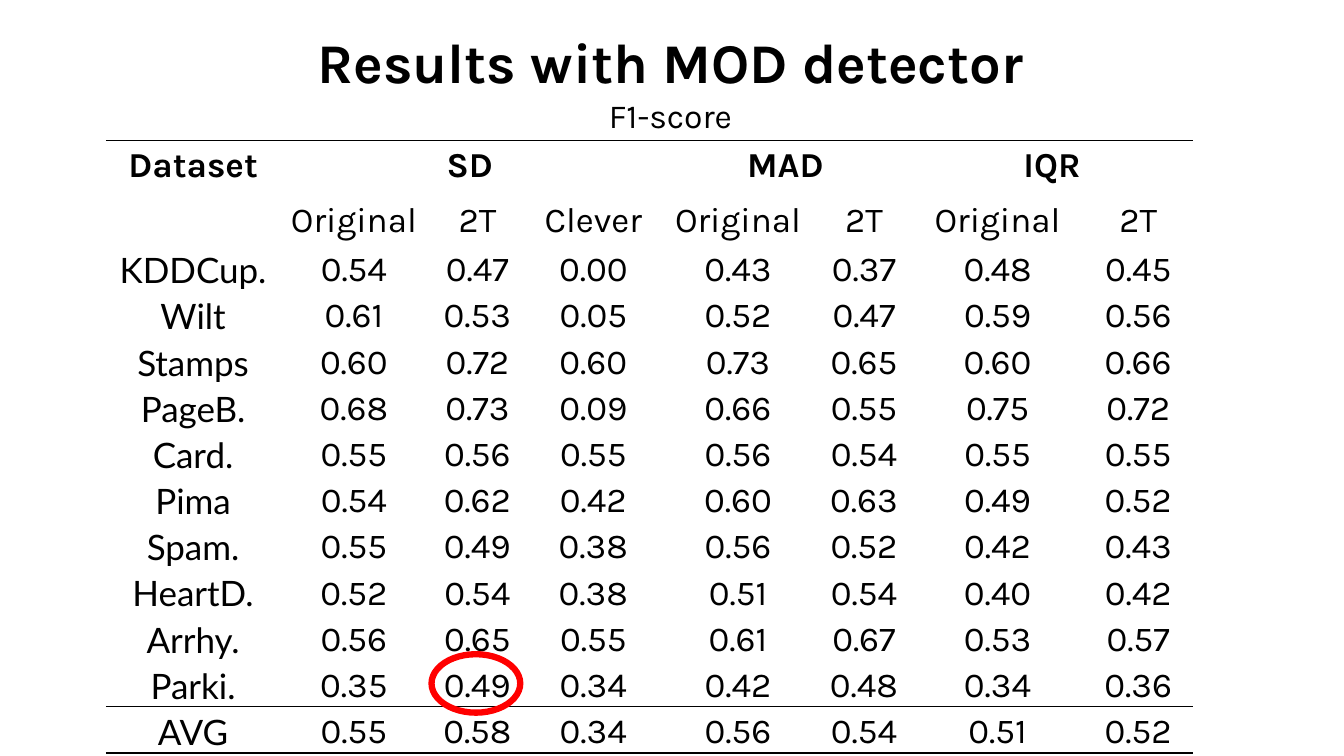
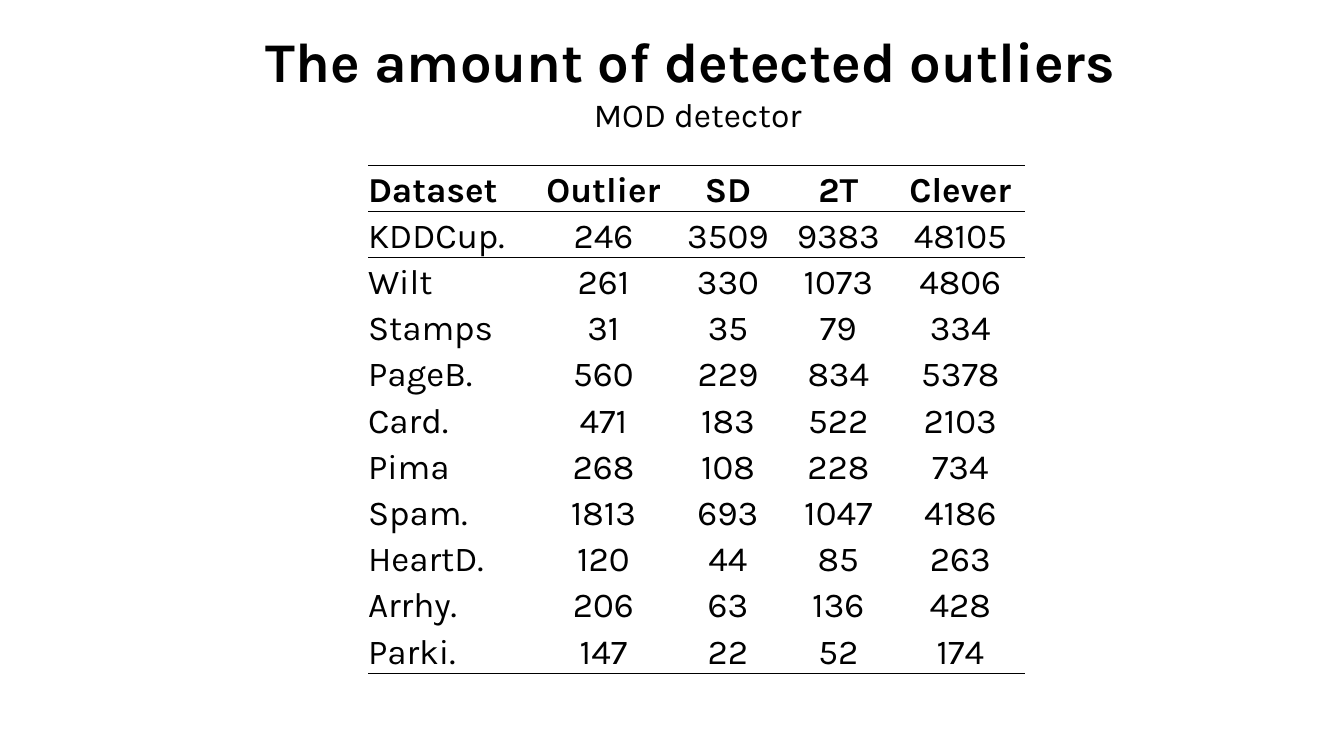
from dataclasses import dataclass
from itertools import product

from lxml.etree import SubElement
from pptx import Presentation
from pptx.dml.color import RGBColor
from pptx.enum.shapes import MSO_SHAPE
from pptx.enum.text import MSO_ANCHOR, MSO_AUTO_SIZE, PP_ALIGN
from pptx.oxml.ns import qn
from pptx.util import Inches, Pt


@dataclass(frozen=True)
class Theme:
    """Colours, fonts and sizes shared by the slides."""
    ink: str = "000000"
    mark: str = "FF0000"
    font: str = "Karla"
    name_font: str = "Lato"
    title: int = 40
    subtitle: int = 24
    body: int = 25
    rule: float = 1
    ring: float = 4.5
    row: float = 0.41
    head_row: float = 0.52
    spacing: float = 1.1
    plain_table: str = "{2D5ABB26-0587-4C30-8999-92F81FD0307C}"


theme = Theme()
NAMES = "KDDCup. Wilt Stamps PageB. Card. Pima Spam. HeartD. Arrhy. Parki.".split()
SCORES = """0.54 0.47 0.00 0.43 0.37 0.48 0.45
0.61 0.53 0.05 0.52 0.47 0.59 0.56
0.60 0.72 0.60 0.73 0.65 0.60 0.66
0.68 0.73 0.09 0.66 0.55 0.75 0.72
0.55 0.56 0.55 0.56 0.54 0.55 0.55
0.54 0.62 0.42 0.60 0.63 0.49 0.52
0.55 0.49 0.38 0.56 0.52 0.42 0.43
0.52 0.54 0.38 0.51 0.54 0.40 0.42
0.56 0.65 0.55 0.61 0.67 0.53 0.57
0.35 0.49 0.34 0.42 0.48 0.34 0.36
0.55 0.58 0.34 0.56 0.54 0.51 0.52"""
COUNTS = """246 3509 9383 48105
261 330 1073 4806
31 35 79 334
560 229 834 5378
471 183 522 2103
268 108 228 734
1813 693 1047 4186
120 44 85 263
206 63 136 428
147 22 52 174"""


def add_rows(names, block):
    """Join each row name with the values on its line."""
    return [[name, *line.split()] for name, line in zip(names, block.splitlines())]


def write(p, text, size, bold=False, font=theme.font, align=PP_ALIGN.CENTER):
    """Put one formatted run into a paragraph."""
    p.alignment = align
    r = p.add_run()
    r.text = text
    for key, value in dict(size=Pt(size), bold=bold, name=font).items():
        setattr(r.font, key, value)
    r.font.color.rgb = RGBColor.from_string(theme.ink)


slides = [
    dict(
        title="Results with MOD detector", subtitle="F1-score",
        title_box=(2.1, 0.22, 9.1, 1.17), corner=(1.05, 1.39),
        cols=(1.73, 1.46, 0.99, 1.31, 1.56, 0.94, 1.71, 1.08),
        rows=[["Dataset", "SD", "", "", "MAD", "", "IQR", ""],
              ["", "Original", "2T", "Clever", "Original", "2T", "Original", "2T"],
              *add_rows([*NAMES, "AVG"], SCORES)],
        merges=[(0, 0, 1, 0), (0, 1, 0, 3), (0, 4, 0, 5), (0, 6, 0, 7)],
        rules={0, 12, 13}, head_rows=2,
        name_font=theme.name_font, name_align=PP_ALIGN.CENTER,
        ring=(4.28, 6.49, 0.88, 0.58),
    ),
    dict(
        title="The amount of detected outliers ", subtitle="MOD detector",
        title_box=(2.1, 0.21, 9.64, 1.18), corner=(3.65, 1.64),
        cols=(1.63, 1.41, 1.06, 1.13, 1.29),
        rows=[["Dataset", "Outlier", "SD", "2T", "Clever"], *add_rows(NAMES, COUNTS)],
        merges=[], rules={0, 1, 11}, head_rows=0,
        name_font=theme.font, name_align=PP_ALIGN.LEFT,
        ring=None,
    ),
]

prs = Presentation()
prs.slide_width, prs.slide_height = Inches(13.33), Inches(7.5)

for page in slides:
    slide = prs.slides.add_slide(prs.slide_layouts[6])

    tf = slide.shapes.add_textbox(*map(Inches, page["title_box"])).text_frame
    frame_format = dict(word_wrap=True, auto_size=MSO_AUTO_SIZE.SHAPE_TO_FIT_TEXT,
                        vertical_anchor=MSO_ANCHOR.MIDDLE)
    for key, value in frame_format.items():
        setattr(tf, key, value)
    write(tf.paragraphs[0], page["title"], theme.title, bold=True)
    write(tf.add_paragraph(), page["subtitle"], theme.subtitle)

    rows, cols = page["rows"], page["cols"]
    heights = [theme.head_row if i < page["head_rows"] else theme.row
               for i in range(len(rows))]
    gf = slide.shapes.add_table(len(rows), len(cols), *map(
        Inches, (*page["corner"], sum(cols), sum(heights))))
    table = gf.table
    table.first_row = table.horz_banding = False
    next(gf.element.iter(qn("a:tableStyleId"))).text = theme.plain_table
    for column, width in zip(table.columns, cols):
        column.width = Inches(width)
    for row, height in zip(table.rows, heights):
        row.height = Inches(height)
    for top, left, bottom, right in page["merges"]:
        table.cell(top, left).merge(table.cell(bottom, right))

    for i, j in product(range(len(rows)), range(len(cols))):
        cell = table.cell(i, j)
        group_head = i == 0 and page["head_rows"] > 0
        if group_head:
            cell.vertical_anchor = MSO_ANCHOR.TOP
        else:
            cell.vertical_anchor = MSO_ANCHOR.MIDDLE
            for side in ("left", "right", "top", "bottom"):
                setattr(cell, f"margin_{side}", 0)
        for edge, boundary in (("a:lnT", i), ("a:lnB", i + 1)):
            if boundary in page["rules"]:
                ln = SubElement(cell._tc.get_or_add_tcPr(), qn(edge),
                                w=str(Pt(theme.rule)))
                SubElement(SubElement(ln, qn("a:solidFill")), qn("a:srgbClr"),
                           val=theme.ink)
        cell.fill.background()
        if rows[i][j]:
            p = cell.text_frame.paragraphs[0]
            named = j == 0 and i > 0
            write(p, rows[i][j], theme.body, bold=i == 0,
                  font=page["name_font"] if named else theme.font,
                  align=page["name_align"] if j == 0 else PP_ALIGN.CENTER)
            if not group_head:
                p.line_spacing = theme.spacing

    if page["ring"]:
        sp = slide.shapes.add_shape(MSO_SHAPE.OVAL, *map(Inches, page["ring"]))
        sp.shadow.inherit = False
        sp.fill.background()
        sp.line.color.rgb = RGBColor.from_string(theme.mark)
        sp.line.width = Pt(theme.ring)

prs.save("out.pptx")
